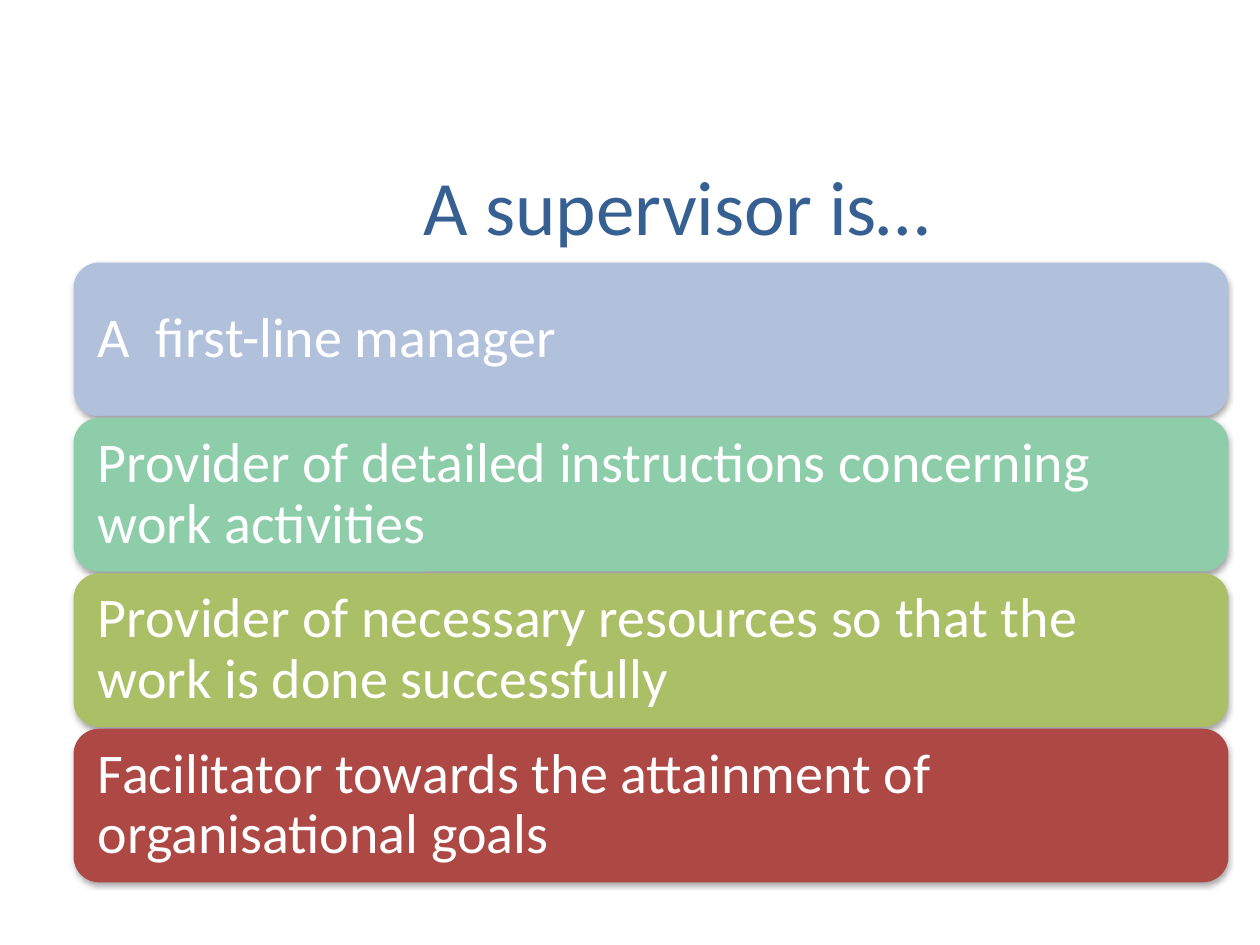
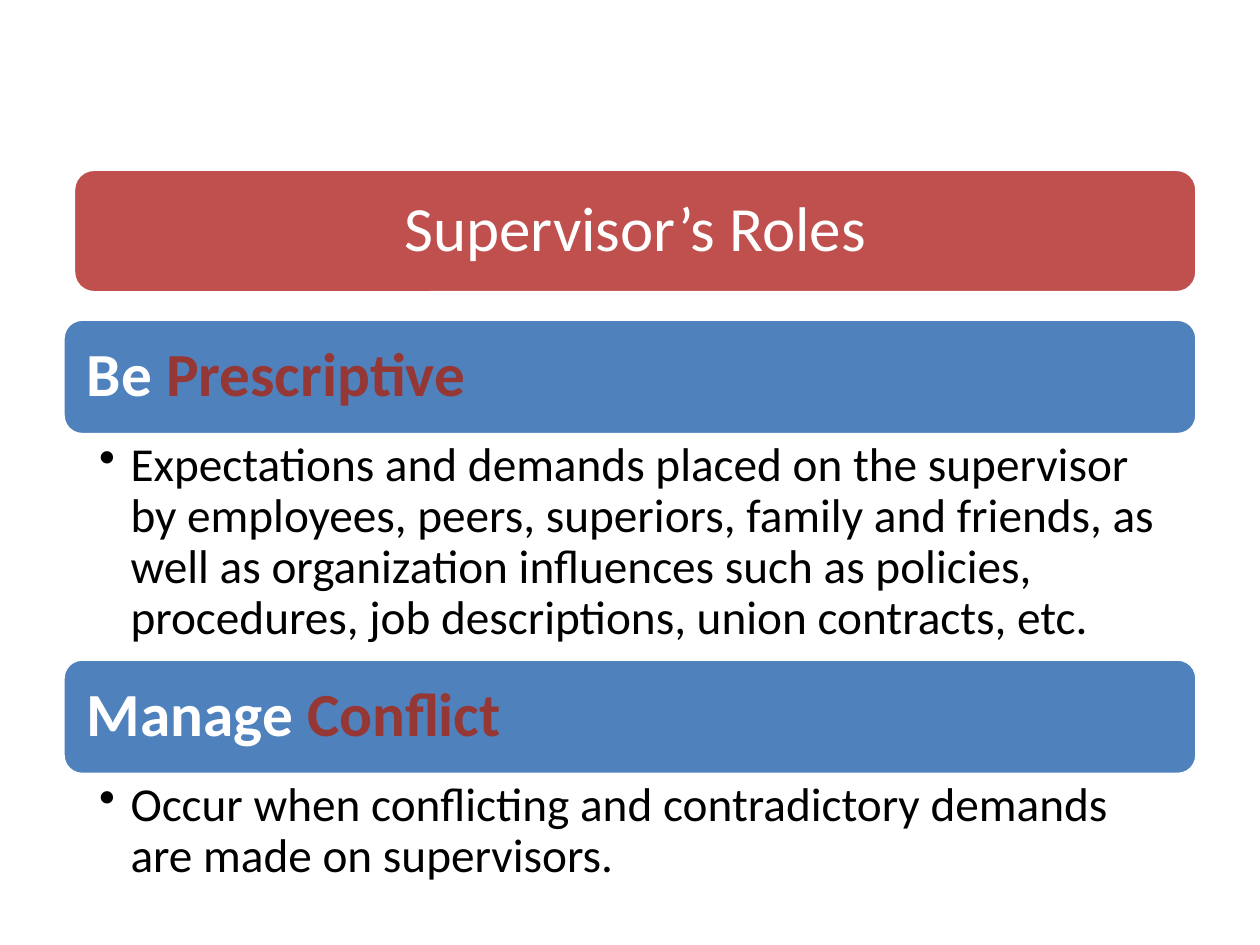
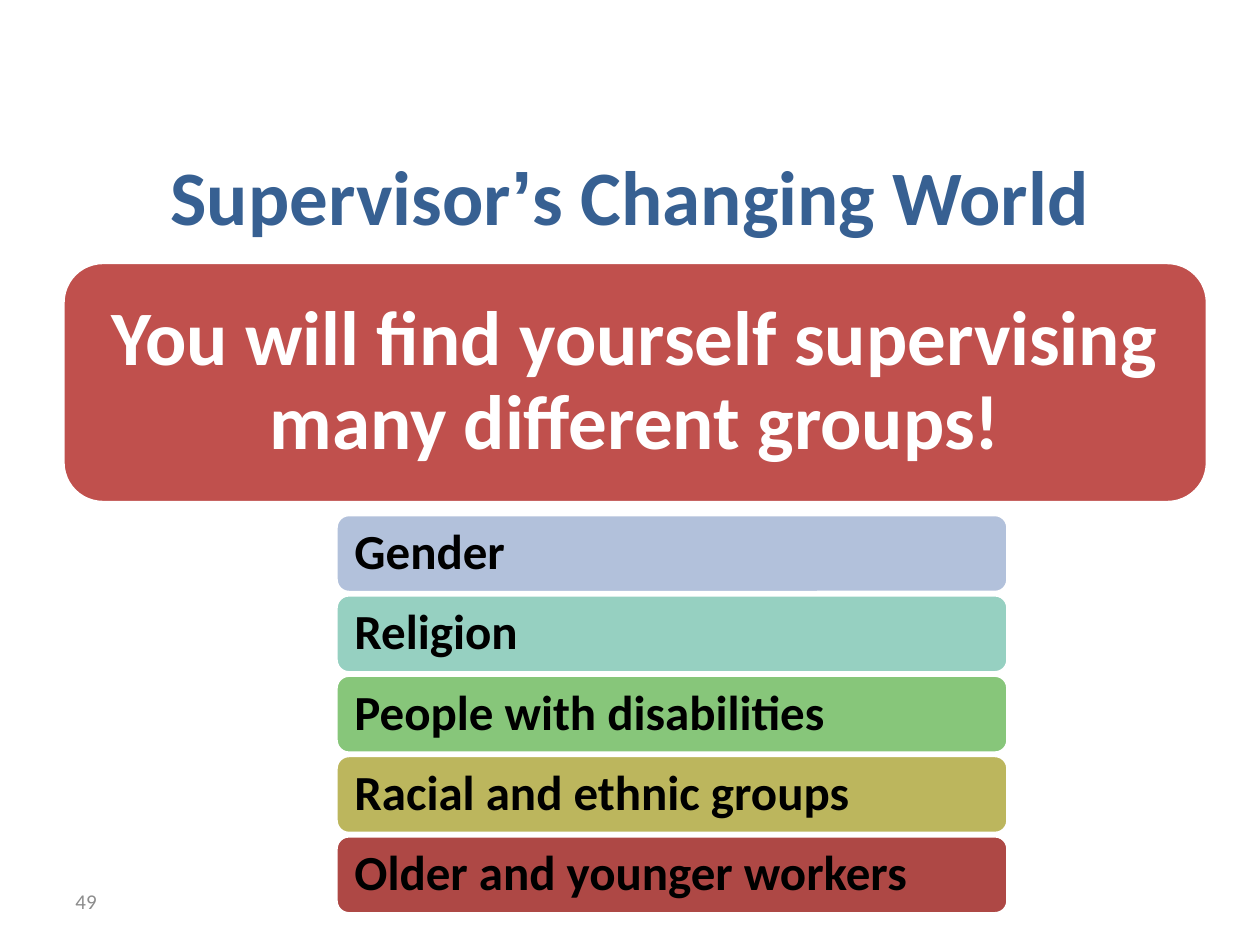
"""Build three slides on the supervisor's role."""
from dataclasses import dataclass

from lxml import etree
from pptx import Presentation
from pptx.dml.color import RGBColor
from pptx.enum import shapes, text
from pptx.oxml import ns
from pptx.util import Pt

DUTIES = [
    ("A  first-line manager", "B2C1DB"),
    ("Provider of detailed instructions concerning work activities", "8DCDA9"),
    ("Provider of necessary resources so that the work is done successfully", "ABBF67"),
    ("Facilitator towards the attainment of organisational goals", "AE4845"),
]
ROLES = [
    ("Be ", "Prescriptive", 128.2,
     "Expectations and demands placed on the supervisor by employees, peers, "
     "superiors, family and friends, as well as organization influences such as "
     "policies, procedures, job descriptions, union contracts, etc."),
    ("Manage ", "Conflict", 67,
     "Occur when conflicting and contradictory demands are made on supervisors."),
]
GROUPS = [
    ("Gender", "B2C1DB"),
    ("Religion", "96D0C1"),
    ("People with disabilities", "87C67A"),
    ("Racial and ethnic groups", "BCB65D"),
    ("Older and younger workers", "AE4845"),
]


@dataclass(frozen=True)
class Theme:
    font: str = "Calibri"
    mark: str = "Arial"
    title: str = "376092"
    red: str = "C0504D"
    blue: str = "4F81BD"
    dark: str = "953735"
    white: str = "FFFFFF"
    black: str = "000000"
    grey: str = "8C8C8C"
    head: int = 44
    lead: int = 36
    role: int = 35
    duty: int = 32
    group: int = 28
    body: int = 27
    note: int = 12


T = Theme()
ALIGN = text.PP_ALIGN
MIDDLE = text.MSO_ANCHOR.MIDDLE


def rgb(code):
    return RGBColor.from_string(code)


def write(shape, runs, size, color, bold=False, align=ALIGN.LEFT,
          inset=(7.2, 3.6, 7.2, 3.6), anchor=MIDDLE, line=1.0, bullet=False):
    frame = shape.text_frame
    frame.word_wrap = True
    frame.vertical_anchor = anchor
    frame.margin_left, frame.margin_top, frame.margin_right, frame.margin_bottom = map(Pt, inset)
    para = frame.paragraphs[0]
    para.alignment = align
    para.line_spacing = line
    if bullet:
        props = para._p.get_or_add_pPr()
        props.set("marL", str(Pt(18)))
        props.set("indent", str(-Pt(18)))
        etree.SubElement(props, ns.qn("a:buChar"), char="•")
    font = para.font
    font.name, font.size, font.bold = T.font, Pt(size), bold
    font.color.rgb = rgb(color)
    for words, hue, face in runs:
        run = para.add_run()
        run.text = words
        for part, value in (("color", hue), ("name", face)):
            if value and part == "color":
                run.font.color.rgb = rgb(value)
            elif value:
                run.font.name = value


def plain(words):
    return [(words, None, None)]


def label(slide, box, runs, size, color, **style):
    write(slide.shapes.add_textbox(*map(Pt, box)), runs, size, color, **style)


def title(slide, box, runs, bold=False):
    label(slide, box, runs, T.head, T.title, bold=bold, align=ALIGN.CENTER)


def shade(shape):
    effects = shape._element.spPr.find(ns.qn("a:effectLst"))
    outer = etree.SubElement(effects, ns.qn("a:outerShdw"), blurRad=str(Pt(3.1)),
                             dist=str(Pt(1.8)), dir="5400000", rotWithShape="0")
    tint = etree.SubElement(outer, ns.qn("a:srgbClr"), val=T.black)
    etree.SubElement(tint, ns.qn("a:alpha"), val="35000")


def bar(slide, box, fill, runs, size, pad, color=T.white, raised=False, **style):
    shape = slide.shapes.add_shape(shapes.MSO_SHAPE.ROUNDED_RECTANGLE, *map(Pt, box))
    shape.shadow.inherit = False
    shape.fill.solid()
    shape.fill.fore_color.rgb = rgb(fill)
    if raised:
        shape.line.fill.background()
        shade(shape)
    else:
        shape.line.color.rgb = rgb(T.white)
        shape.line.width = Pt(2)
    write(shape, runs, size, color, inset=(pad,) * 4, line=0.9, **style)


def duties(slide):
    title(slide, (72, 84, 630, 66), plain("A supervisor is…"))
    for i, (words, fill) in enumerate(DUTIES):
        bar(slide, (42, 150 + i * 88.8, 660, 87.8), fill, plain(words),
            T.duty, 9.6, raised=True)


def roles(slide):
    bar(slide, (42, 96.7, 642, 70.6), T.red, plain("Supervisor’s Roles"),
        T.lead, 10.8, align=ALIGN.CENTER)
    top, high = 182.4, 66
    for verb, key, tall, words in ROLES:
        runs = [(verb, None, None), (key, T.dark, None)]
        bar(slide, (36, top, 648, high), T.blue, runs, T.role, 10.5, bold=True)
        top += high
        label(slide, (36, top, 648, tall), plain(words), T.body, T.black,
              inset=(20.6, 3.4, 19.2, 3.4), anchor=text.MSO_ANCHOR.TOP,
              line=0.9, bullet=True)
        top += tall


def groups(slide):
    label(slide, (36, 500.5, 168, 28.75), plain("49"), T.note, T.grey)
    title(slide, (36, 66, 648, 90),
          [("Supervisor", None, None), ("’", None, T.mark), ("s Changing World", None, None)],
          bold=True)
    bar(slide, (36, 150, 654, 137.2), T.red,
        plain("You will find yourself supervising many different groups!"),
        T.head, 13.2, bold=True, align=ALIGN.CENTER)
    for i, (words, fill) in enumerate(GROUPS):
        bar(slide, (192, 294 + i * 45.9, 384, 44.6), fill, plain(words),
            T.group, 8.4, color=T.black, bold=True)


def main():
    deck = Presentation()
    deck.slide_width, deck.slide_height = Pt(720), Pt(540)
    for build in (duties, roles, groups):
        build(deck.slides.add_slide(deck.slide_layouts[6]))
    deck.save("out.pptx")


if __name__ == "__main__":
    main()
